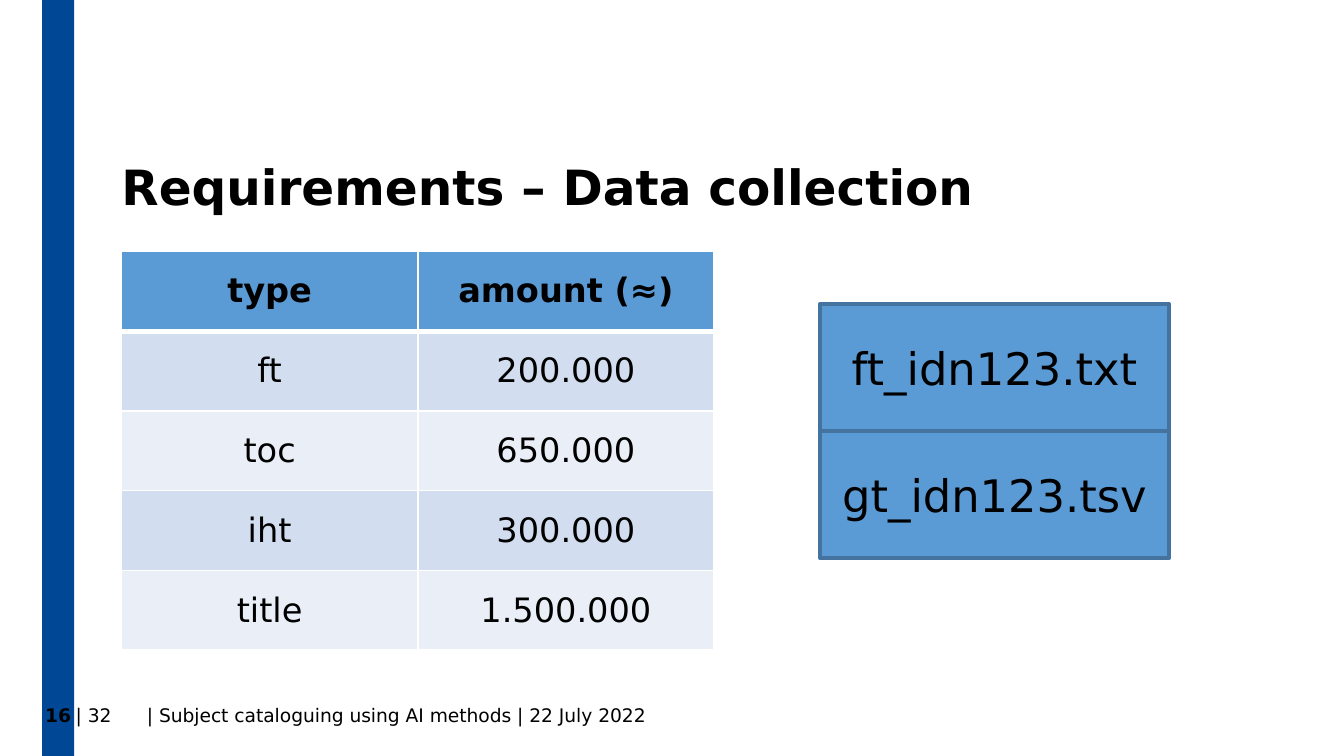
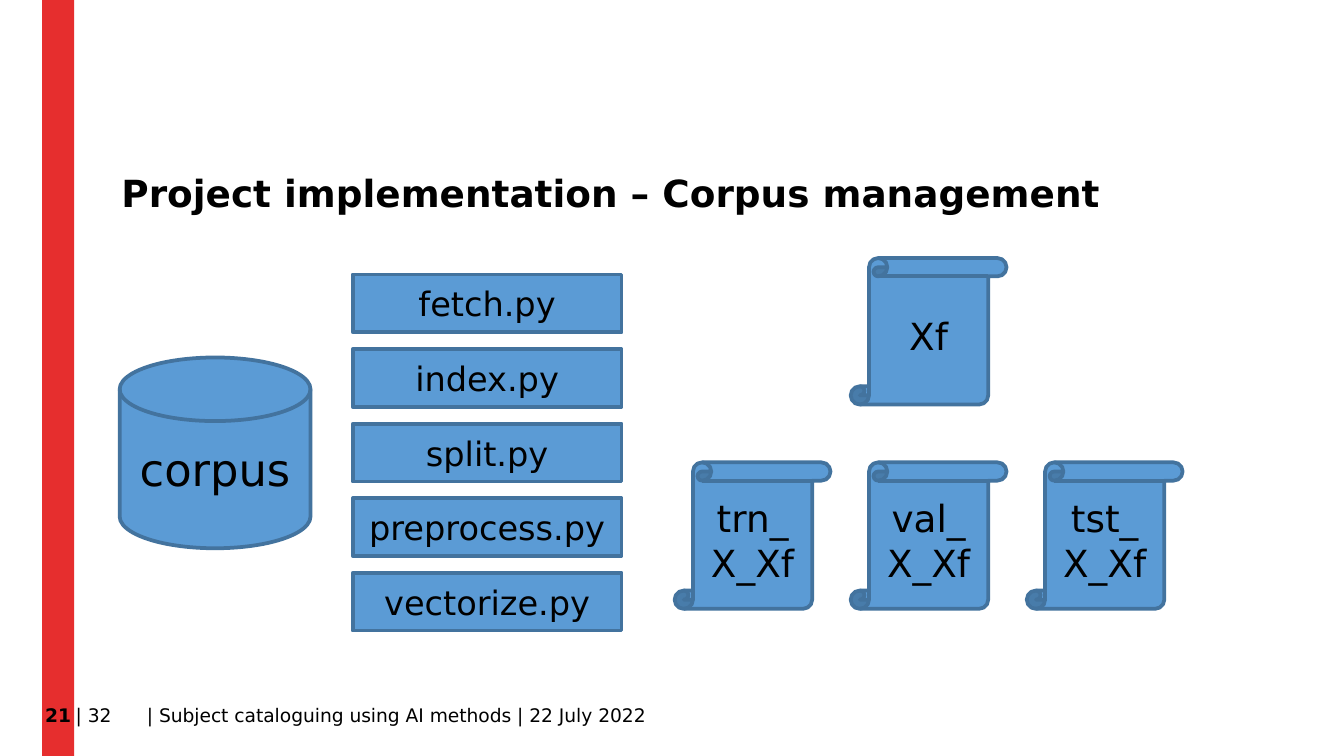
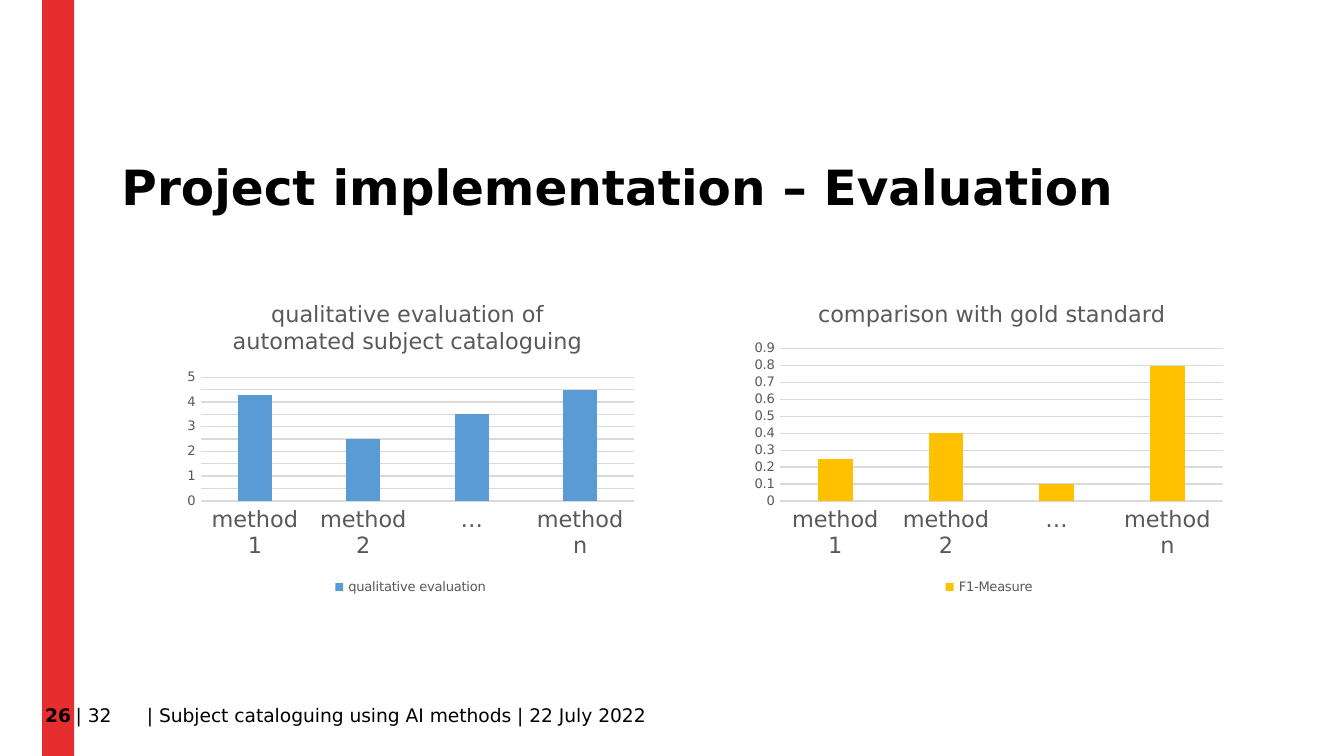
from pptx import Presentation
from pptx.chart.data import CategoryChartData as ChartData
from pptx.dml.color import RGBColor as RGB
from pptx.enum.chart import XL_CHART_TYPE as CHART, XL_LEGEND_POSITION as LEGEND
from pptx.enum.chart import XL_TICK_MARK as TICK
from pptx.enum.shapes import MSO_SHAPE as SHAPE
from pptx.enum.text import MSO_ANCHOR as ANCHOR, PP_ALIGN as ALIGN
from pptx.oxml import parse_xml
from pptx.oxml.ns import nsdecls, qn
from pptx.util import Inches, Pt

FONT = "DejaVu Sans"
BLACK = RGB(0x00, 0x00, 0x00)
WHITE = RGB(0xFF, 0xFF, 0xFF)
NAVY = RGB(0x00, 0x48, 0x96)
RED = RGB(0xE6, 0x2E, 0x2E)
BLUE = RGB(0x5B, 0x9B, 0xD5)
EDGE = RGB(0x43, 0x73, 0x9E)
GOLD = RGB(0xFF, 0xC0, 0x00)
BANDS = RGB(0xD2, 0xDE, 0xEF), RGB(0xEA, 0xEF, 0xF7)
GRAY = RGB(0x59, 0x59, 0x59)
RULE = RGB(0xD9, 0xD9, 0xD9)

COLS, ROWS = 100, 56.25
LEFT = 9.04
TOTAL = 32
FOOTER = "Subject cataloguing using AI methods | 22 July 2022"
METHODS = ["method 1", "method 2", "…", "method n"]


def cell(n):
    """Length of n grid cells, each a tenth of an inch."""
    return Inches(n / 10)


def place(*spans):
    return [cell(n) for n in spans]


def apply(item, values):
    for name, value in values.items():
        setattr(item, name, value)


def ink(font, size, color=BLACK, bold=False):
    apply(font, {"name": FONT, "size": Pt(size), "bold": bold})
    font.color.rgb = color


def write(frame, text, size, bold=False, align=ALIGN.LEFT, **extra):
    """Fill a text frame with one paragraph; extra sets frame attributes."""
    apply(frame, {"word_wrap": True, **extra})
    para = frame.paragraphs[0]
    para.alignment = align
    run = para.add_run()
    run.text = text
    ink(run.font, size, bold=bold)
    return para


def margins(left=0, top=0, right=0, bottom=0):
    sides = {"left": left, "top": top, "right": right, "bottom": bottom}
    return {f"margin_{side}": cell(n) for side, n in sides.items()}


def label(slide, spot, text, size, **extra):
    box = slide.shapes.add_textbox(*place(*spot))
    return write(box.text_frame, text, size, **margins(), **extra)


def block(slide, kind, spot, text, size, fill=BLUE, edge=EDGE, **extra):
    shape = slide.shapes.add_shape(kind, *place(*spot))
    shape.shadow.inherit = False
    shape.fill.solid()
    shape.fill.fore_color.rgb = fill
    if edge is None:
        shape.line.fill.background()
    else:
        shape.line.color.rgb = edge
        shape.line.width = Pt(2)
    look = {"vertical_anchor": ANCHOR.MIDDLE, "align": ALIGN.CENTER, **extra}
    write(shape.text_frame, text, size, **look)


def start(deck, number, title, size=26, band=RED):
    """Add a slide with its title, footer and numbered band."""
    slide = deck.slides.add_slide(deck.slide_layouts[6])
    head = label(slide, (LEFT, 11.83, 83, 8.5), title, size, bold=True)
    head.line_spacing = Pt(30)
    foot = label(slide, (5.63, 52.4, 86.1, 1.7), f"| {TOTAL}\t| {FOOTER}", 10)
    foot._p.get_or_add_pPr().append(parse_xml(
        f'<a:tabLst {nsdecls("a")}><a:tab pos="{cell(5.3)}" algn="l"/></a:tabLst>'))
    block(slide, SHAPE.RECTANGLE, (3.13, 0, 2.4, ROWS), str(number), 10,
          fill=band, edge=None, bold=True, word_wrap=False,
          vertical_anchor=ANCHOR.BOTTOM, **margins(top=0.5, bottom=2.2))
    return slide


def border(box, top, bottom):
    widths = {"L": 1, "R": 1, "T": top, "B": bottom}
    for side, width in widths.items():
        box._tc.get_or_add_tcPr().append(parse_xml(
            f'<a:ln{side} {nsdecls("a")} w="{Pt(width)}"><a:solidFill>'
            f'<a:srgbClr val="{WHITE}"/></a:solidFill></a:ln{side}>'))


def grid(slide, spot, rows):
    shape = slide.shapes.add_table(len(rows), len(rows[0]), *place(*spot))
    for r, row in enumerate(rows):
        for c, text in enumerate(row):
            box = shape.table.cell(r, c)
            border(box, 3 if r == 1 else 1, 3 if r == 0 else 1)
            box.fill.solid()
            box.fill.fore_color.rgb = BANDS[(r - 1) % 2] if r else BLUE
            box.vertical_anchor = ANCHOR.MIDDLE
            write(box.text_frame, text, 18, bold=r == 0, align=ALIGN.CENTER)


def pin(part, index, target="", **shares):
    """Fix a chart part at shares of the chart's size."""
    old = part.find(qn("c:layout"))
    if old is not None:
        part.remove(old)
    modes = "".join(f'<c:{k}Mode val="edge"/>' for k in "xy")
    sizes = "".join(f'<c:{k} val="{v}"/>' for k, v in shares.items())
    part.insert(index, parse_xml(
        f'<c:layout {nsdecls("c")}><c:manualLayout>{target}{modes}{sizes}'
        '</c:manualLayout></c:layout>'))


def bars(slide, spot, title, series, values, color, step, head, plot):
    data = ChartData()
    data.categories = METHODS
    data.add_series(series, values)
    chart = slide.shapes.add_chart(
        CHART.COLUMN_CLUSTERED, *place(*spot), data).chart
    apply(chart, {"has_title": True, "has_legend": True})
    ink(chart.font, 7)

    run = chart.chart_title.text_frame.paragraphs[0].add_run()
    run.text = title
    ink(run.font, 12, GRAY)
    pin(chart.chart_title._element, 1, **head)

    apply(chart.legend, {"position": LEGEND.BOTTOM, "include_in_layout": False})
    ink(chart.legend.font, 7, GRAY)

    for axis, size in ((chart.category_axis, 12), (chart.value_axis, 7)):
        apply(axis, {"major_tick_mark": TICK.NONE, "minor_tick_mark": TICK.NONE})
        ink(axis.tick_labels.font, size, GRAY)
    chart.value_axis.major_unit = step
    chart.value_axis.format.line.fill.background()
    for item in (chart.category_axis, chart.value_axis.major_gridlines):
        item.format.line.color.rgb = RULE
        item.format.line.width = Pt(0.75)

    group = chart.plots[0]
    apply(group, {"gap_width": 219, "overlap": -27, "vary_by_categories": False})
    fill = group.series[0].format.fill
    fill.solid()
    fill.fore_color.rgb = color
    pin(group._element.getparent(), 0,
        '<c:layoutTarget val="inner"/>', **plot)


def needs(deck):
    slide = start(deck, 16, "Requirements – Data collection", band=NAVY)
    grid(slide, (LEFT, 18.7, 44.1, 29.7), [
        ("type", "amount (≈)"),
        ("ft", "200.000"),
        ("toc", "650.000"),
        ("iht", "300.000"),
        ("title", "1.500.000"),
    ])
    for i, name in enumerate(("ft_idn123.txt", "gt_idn123.tsv")):
        block(slide, SHAPE.RECTANGLE, (61, 22.63 + 9.45 * i, 26, 9.45), name, 24)


def corpus(deck):
    slide = start(deck, 21, "Project implementation – Corpus management", 20)
    block(slide, SHAPE.FLOWCHART_MAGNETIC_DISK, (8.9, 26.6, 14.2, 14.2),
          "corpus", 24)
    steps = "fetch", "index", "split", "preprocess", "vectorize"
    for i, step in enumerate(steps):
        block(slide, SHAPE.RECTANGLE, (26.25, 20.43 + 5.55 * i, 20, 4.3),
              f"{step}.py", 18)
    scrolls = [("Xf", 1, 19.2)]
    scrolls += [(f"{part}_X_Xf", i, 34.4)
                for i, part in enumerate(("trn", "val", "tst"))]
    for text, col, top in scrolls:
        block(slide, SHAPE.VERTICAL_SCROLL,
              (50.2 + 13.1 * col, top, 11.6, 10.9), text, 20)


def scores(deck):
    slide = start(deck, 26, "Project implementation – Evaluation")
    bars(slide, (13.2, 21, 34.7, 23.6),
         "qualitative evaluation of automated subject cataloguing",
         "qualitative evaluation", (4.3, 2.5, 3.5, 4.5), BLUE, 0.5,
         {"x": 0.11, "y": 0.04}, {"x": 0.05, "y": 0.3, "w": 0.93, "h": 0.39})
    bars(slide, (55.5, 21, 36.2, 23.6), "comparison with gold standard",
         "F1-Measure", (0.25, 0.4, 0.1, 0.8), GOLD, 0.1,
         {"x": 0.14, "y": 0.04}, {"x": 0.07, "y": 0.21, "w": 0.91, "h": 0.48})


def main():
    deck = Presentation()
    apply(deck, {"slide_width": cell(COLS), "slide_height": cell(ROWS)})
    for build in (needs, corpus, scores):
        build(deck)
    deck.save("out.pptx")


if __name__ == "__main__":
    main()
